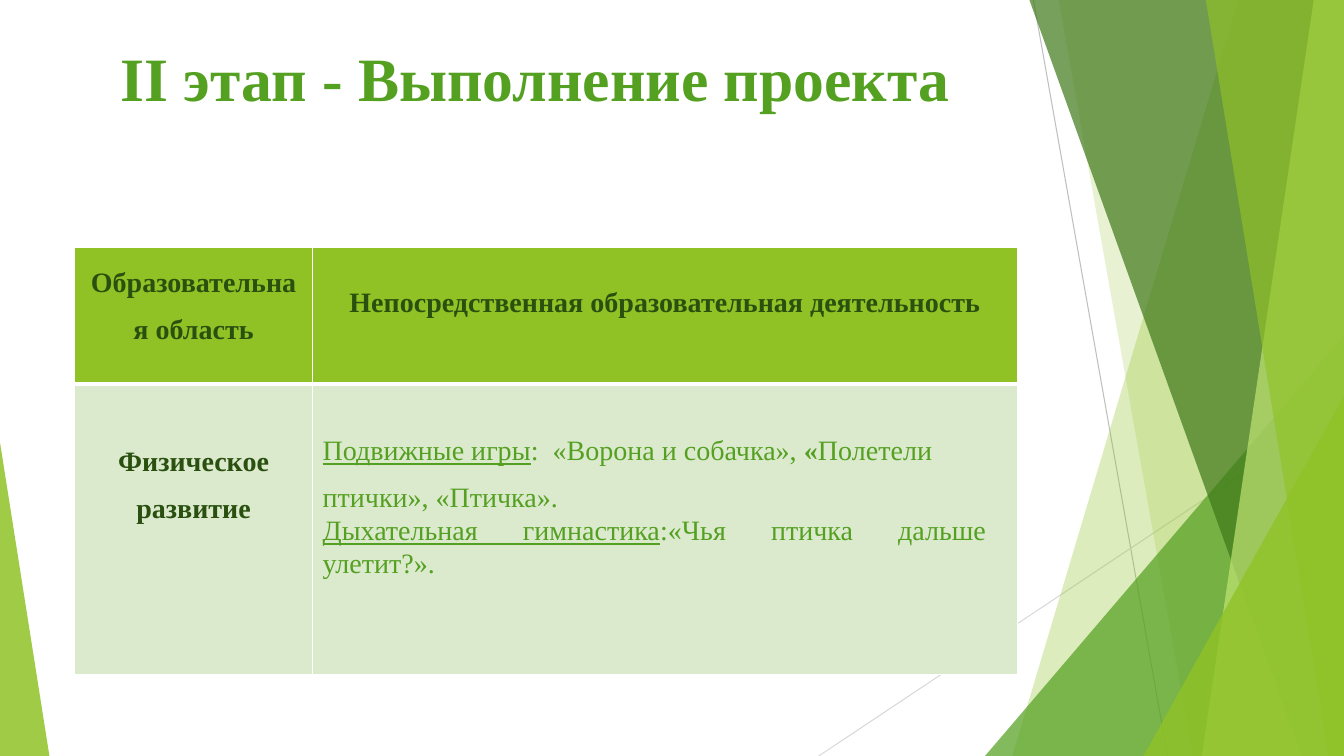
from dataclasses import dataclass

from lxml import etree
from pptx import Presentation
from pptx.dml.color import RGBColor
from pptx.enum.shapes import MSO_CONNECTOR, MSO_SHAPE
from pptx.enum.text import MSO_ANCHOR, PP_ALIGN
from pptx.oxml import parse_xml
from pptx.oxml.ns import nsdecls, qn
from pptx.util import Inches, Pt

LIME = RGBColor(0x90, 0xC2, 0x26)
GREEN = RGBColor(0x54, 0xA0, 0x21)
FOREST = RGBColor(0x3F, 0x78, 0x19)
PALE_LIME = RGBColor(0xC0, 0xE4, 0x74)
DARK_GREEN = RGBColor(0x2A, 0x50, 0x10)
MINT = RGBColor(0xDB, 0xE9, 0xCD)
GREY = RGBColor(0xBF, 0xBF, 0xBF)
LIGHT_GREY = RGBColor(0xD9, 0xD9, 0xD9)

STRAIGHT = MSO_CONNECTOR.STRAIGHT
TRIANGLE = MSO_SHAPE.ISOSCELES_TRIANGLE
TOP, MIDDLE = MSO_ANCHOR.TOP, MSO_ANCHOR.MIDDLE
LEFT, CENTER, JUSTIFY = PP_ALIGN.LEFT, PP_ALIGN.CENTER, PP_ALIGN.JUSTIFY

FONT = "Times New Roman"
WIDTH, HEIGHT = 13.33, 7.5


@dataclass
class Ray:
    x1: float
    y1: float
    x2: float
    y2: float
    color: RGBColor


@dataclass
class Band:
    """Area between a slanted left edge and the right side of the slide."""
    top_x: float
    bottom_x: float
    color: RGBColor
    alpha: int


@dataclass
class Corner:
    """Right triangle standing on the bottom of the slide."""
    left: float
    top: float
    width: float
    apex: float
    color: RGBColor
    alpha: int


@dataclass
class Span:
    text: str
    color: RGBColor = DARK_GREEN
    bold: bool = False
    underline: bool = False
    size: float = 20


@dataclass
class Para:
    spans: list[Span]
    align: PP_ALIGN = CENTER
    spacing: float = 1.5


@dataclass
class Entry:
    paras: list[Para]
    fill: RGBColor
    top: float = 0.05
    right: float = 0.1


RAYS = [Ray(10.25, 0, 11.58, HEIGHT, GREY), Ray(WIDTH, 4.03, 8.12, HEIGHT, LIGHT_GREY)]

DECOR = [
    Band(12.28, 10.04, LIME, 30),
    Band(10.5, 11.83, LIME, 20),
    Corner(9.77, 3.33, 3.56, 1, GREEN, 72),
    Band(10.21, 12.91, FOREST, 70),
    Band(13.03, 11.92, PALE_LIME, 70),
    Band(11.96, 13.18, LIME, 65),
    Corner(11.34, 3.93, 1.99, 1, LIME, 80),
    Corner(0, 4.39, 0.49, 0, LIME, 85),
]

TITLE = Para([Span("II этап - Выполнение проекта", GREEN, bold=True, size=44)], spacing=1)

COLUMNS = [2.36, 6.99]
ROWS = [1.36, 2.88]
ENTRIES = [
    [
        Entry([Para([Span("Образовательная область", bold=True)])], LIME),
        Entry([Para([Span("Непосредственная образовательная деятельность", bold=True)],
                    spacing=1.07)], LIME, top=0.38),
    ],
    [
        Entry([Para([Span("Физическое развитие", bold=True)])], MINT, top=0.47),
        Entry([
            Para([
                Span("Подвижные игры", GREEN, underline=True),
                Span(":  «Ворона и собачка»,", GREEN),
                Span(" «", GREEN, bold=True),
                Span("Полетели птички», «Птичка».", GREEN),
            ], LEFT),
            Para([
                Span("Дыхательная гимнастика", GREEN, underline=True),
                Span(":«Чья птичка дальше улетит?».", GREEN),
            ], JUSTIFY, 1.07),
        ], MINT, top=0.36, right=0.31),
    ],
]


def paint(sp, color: RGBColor, alpha: int) -> None:
    sp.shadow.inherit = False
    sp.line.fill.background()
    sp.fill.solid()
    sp.fill.fore_color.rgb = color
    clr = sp.fill._xPr.find(".//" + qn("a:srgbClr"))
    etree.SubElement(clr, qn("a:alpha"), val=str(alpha * 1000))


def add_ray(s, ray: Ray) -> None:
    line = s.shapes.add_connector(STRAIGHT, Inches(ray.x1), Inches(ray.y1),
                                  Inches(ray.x2), Inches(ray.y2))
    line.line.color.rgb = ray.color
    line.line.width = Pt(0.75)
    etree.SubElement(line._element.spPr, qn("a:effectLst"))


def add_band(s, band: Band) -> None:
    fb = s.shapes.build_freeform(Inches(band.top_x), 0)
    corners = [(WIDTH, 0), (WIDTH, HEIGHT), (band.bottom_x, HEIGHT)]
    fb.add_line_segments([(Inches(x), Inches(y)) for x, y in corners], close=True)
    paint(fb.convert_to_shape(), band.color, band.alpha)


def add_corner(s, corner: Corner) -> None:
    sp = s.shapes.add_shape(TRIANGLE, Inches(corner.left), Inches(corner.top),
                            Inches(corner.width), Inches(HEIGHT - corner.top))
    sp.adjustments[0] = corner.apex
    paint(sp, corner.color, corner.alpha)


def write(tf, paras: list[Para]) -> None:
    tf.word_wrap = True
    for i, para in enumerate(paras):
        p = tf.add_paragraph() if i else tf.paragraphs[0]
        p.alignment = para.align
        p.line_spacing = para.spacing
        for span in para.spans:
            r = p.add_run()
            r.text = span.text
            r.font.name = FONT
            r.font.size = Pt(span.size)
            r.font.bold = span.bold
            r.font.underline = span.underline
            r.font.color.rgb = span.color


def add_borders(cell, top: float, bottom: float) -> None:
    tc_pr = cell._tc.get_or_add_tcPr()
    for i, (side, width) in enumerate(zip("LRTB", (1, 1, top, bottom))):
        tc_pr.insert(i, parse_xml(
            f'<a:ln{side} {nsdecls("a")} w="{Pt(width)}"><a:solidFill>'
            f'<a:srgbClr val="FFFFFF"/></a:solidFill></a:ln{side}>'))


def add_grid(s) -> None:
    table = s.shapes.add_table(len(ROWS), len(COLUMNS), Inches(0.74), Inches(2.45),
                               Inches(sum(COLUMNS)), Inches(sum(ROWS))).table
    table.horz_banding = False
    for column, width in zip(table.columns, COLUMNS):
        column.width = Inches(width)
    for i, (row, height) in enumerate(zip(table.rows, ROWS)):
        row.height = Inches(height)
        for cell, entry in zip(row.cells, ENTRIES[i]):
            cell.fill.solid()
            cell.fill.fore_color.rgb = entry.fill
            cell.vertical_anchor = TOP
            cell.margin_top = Inches(entry.top)
            cell.margin_right = Inches(entry.right)
            add_borders(cell, top=3 if i else 1, bottom=1 if i else 3)
            write(cell.text_frame, entry.paras)


def main() -> None:
    prs = Presentation()
    prs.slide_width, prs.slide_height = Inches(WIDTH), Inches(HEIGHT)
    s = prs.slides.add_slide(prs.slide_layouts[6])

    # Green background decoration
    for ray in RAYS:
        add_ray(s, ray)
    for part in DECOR:
        if isinstance(part, Band):
            add_band(s, part)
        else:
            add_corner(s, part)

    # Title
    title = s.shapes.add_textbox(Inches(0.61), Inches(0.26), Inches(9.4), Inches(1))
    title.text_frame.vertical_anchor = MIDDLE
    write(title.text_frame, [TITLE])

    # Table of activities
    add_grid(s)
    prs.save("out.pptx")


if __name__ == "__main__":
    main()
